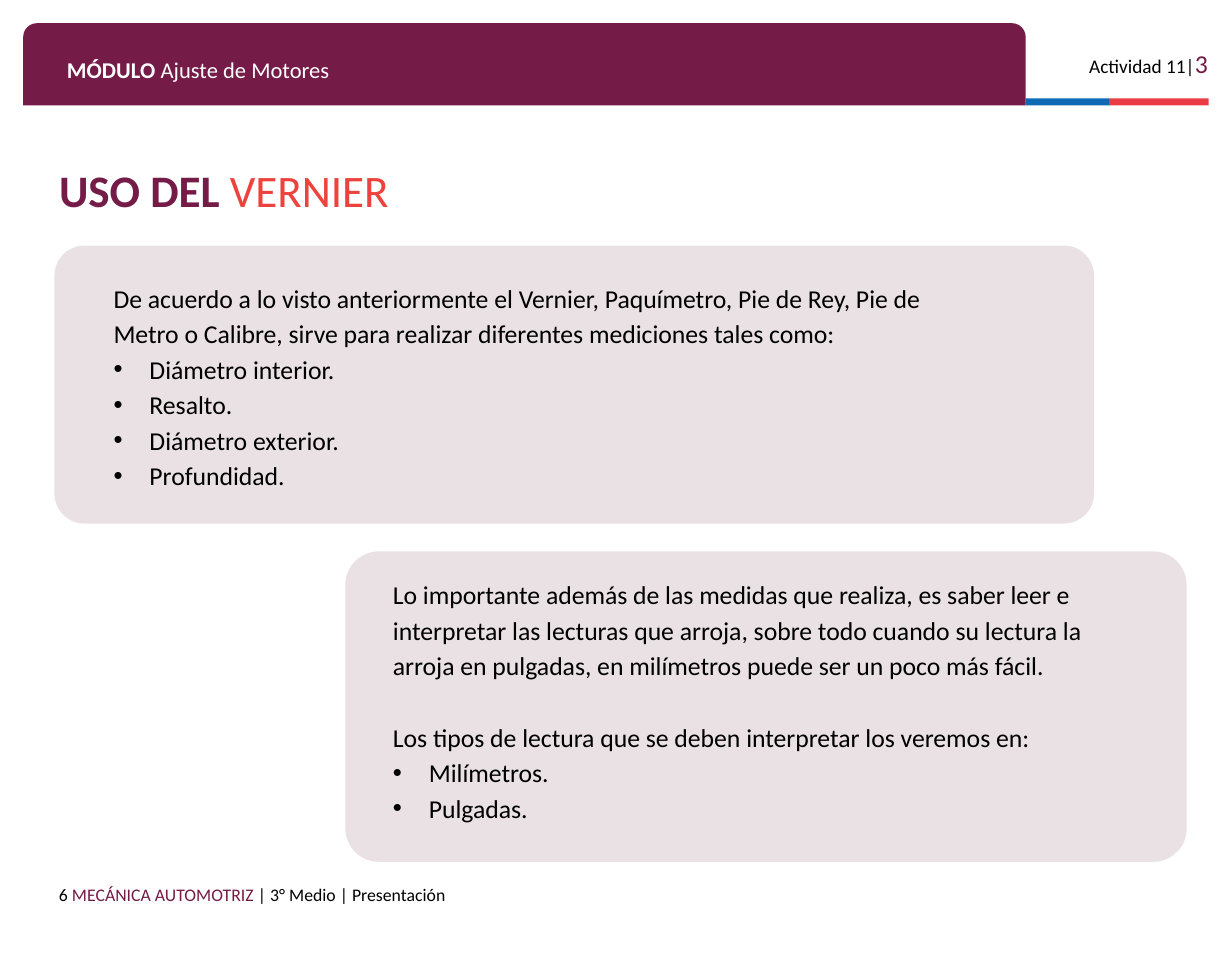
from lxml import etree
from pptx import Presentation, util as u
from pptx.dml.color import RGBColor
from pptx.enum import shapes, text
from pptx.oxml import ns

PLUM = RGBColor(0x74, 0x1B, 0x47)
BLUE = RGBColor(0x0F, 0x69, 0xB4)
RED = RGBColor(0xEB, 0x3C, 0x46)
CORAL = RGBColor(0xED, 0x42, 0x3D)
MIST = RGBColor(0xE9, 0xE1, 0xE4)
BLACK = RGBColor(0, 0, 0)
WHITE = RGBColor(255, 255, 255)
FONT = "Calibri"
WIDE, HIGH = 10.63, 8.27
INDENT = u.Inches(0.31)
BLOCK_GAP = u.Pt(22.4)  # one line of 16 pt text at 1.15 spacing
KIND = shapes.MSO_SHAPE


def place(item, box):
    item.left, item.top, item.width, item.height = map(u.Inches, box)


def add_fill(slide, kind, box, color, *adjust):
    """Add a flat, unlined shape."""
    shape = slide.shapes.add_shape(kind, *map(u.Inches, box))
    shape.shadow.inherit = False
    shape.fill.solid()
    shape.fill.fore_color.rgb = color
    shape.line.fill.background()
    for i, value in enumerate(adjust):
        shape.adjustments[i] = value


def set_line(item, box, runs, align=text.PP_ALIGN.LEFT):
    """Write one line; each run is (words, size, color, bold)."""
    place(item, box)
    frame = item.text_frame
    frame.word_wrap = True
    frame.auto_size = text.MSO_AUTO_SIZE.NONE
    frame.margin_left = frame.margin_right = u.Inches(0.1)
    frame.margin_top = frame.margin_bottom = u.Inches(0.1)
    para = frame.paragraphs[0]
    para.alignment = align
    para.font.name = FONT
    for words, size, color, bold in runs:
        run = para.add_run()
        run.text = words
        run.font.size = u.Pt(size)
        run.font.color.rgb = color
        run.font.bold = bold
    return para


def add_line(slide, box, runs, **more):
    item = slide.shapes.add_textbox(0, 0, 0, 0)
    set_line(item, box, runs, **more)


def add_header(slide, box):
    """Module bar, two-colour strip and activity number."""
    left, top, width, height = box
    bar, blue, strip = 8.65, 0.72, 0.06
    low = top + height - strip
    edge = left + bar
    add_fill(slide, KIND.ROUND_2_SAME_RECTANGLE,
             (left, top, bar, height), PLUM, 0.167, 0)
    add_fill(slide, KIND.RECTANGLE, (edge, low, blue, strip), BLUE)
    add_fill(slide, KIND.RECTANGLE,
             (edge + blue, low, width - bar - blue, strip), RED)
    add_line(slide, (edge + 0.39, top + 0.11, 1.28, 0.38),
             [("Actividad 11|", 12, BLACK, False), ("3", 16, PLUM, False)],
             align=text.PP_ALIGN.RIGHT)
    add_line(slide, (left + 0.28, top + 0.18, 8.14, 0.35),
             [("MÓDULO ", 14, WHITE, True),
              ("Ajuste de Motores", 14, WHITE, False)])


def set_bullet(para, mark):
    """Give the paragraph a hanging bullet, or none."""
    props = para._p.get_or_add_pPr()
    props.set("marL", str(INDENT if mark else 0))
    props.set("indent", str(-INDENT if mark else 0))
    if mark:
        font = etree.SubElement(props, ns.qn("a:buFont"))
        font.set("typeface", "Arial")
        etree.SubElement(props, ns.qn("a:buChar")).set("char", "•")
    else:
        etree.SubElement(props, ns.qn("a:buNone"))


def add_panel(slide, body, box, inset, blocks):
    """Rounded panel with a body; a block is (intro, bullet items)."""
    left, top, width, height = box
    add_fill(slide, KIND.ROUNDED_RECTANGLE, box, MIST, 0.108)
    slide.shapes.element.append(body.element)  # text above its panel
    dx, dy, wide, high = inset
    place(body, (left + dx, top + dy, wide, high))
    frame = body.text_frame
    frame.word_wrap = True
    frame.auto_size = text.MSO_AUTO_SIZE.NONE
    lines = [(words, i > 0, n > 0 and i == 0)
             for n, (intro, items) in enumerate(blocks)
             for i, words in enumerate([intro, *items])]
    frame.text = "\n".join(words for words, _, _ in lines)
    for para, (_, mark, gap) in zip(frame.paragraphs, lines):
        para.line_spacing = 1.15
        para.space_before = BLOCK_GAP if gap else u.Pt(0)
        para.space_after = u.Pt(0)
        set_bullet(para, mark)
        para.font.name = FONT
        para.font.size = u.Pt(16)
        para.font.color.rgb = BLACK


def main():
    deck = Presentation()
    deck.slide_width, deck.slide_height = u.Inches(WIDE), u.Inches(HIGH)
    slide = deck.slides.add_slide(deck.slide_layouts[3])
    title, uses, types = slide.placeholders

    add_header(slide, (0.2, 0.2, WIDE - 0.4, 0.71))

    # Title
    para = set_line(title, (0.41, 1.5, 9.79, 0.35),
                    [("USO DEL ", 28, PLUM, True),
                     ("VERNIER", 28, CORAL, False)])
    para.line_spacing = 0.8
    title.text_frame.vertical_anchor = text.MSO_ANCHOR.MIDDLE

    # Panels
    add_panel(slide, uses, (0.47, 2.12, 8.97, 2.4), (0.41, 0.23, 7.25, 1.95), [
        ("De acuerdo a lo visto anteriormente el Vernier, Paquímetro, "
         "Pie de Rey, Pie de Metro o Calibre, sirve para realizar "
         "diferentes mediciones tales como:",
         ["Diámetro interior.", "Resalto.", "Diámetro exterior.",
          "Profundidad."])])
    add_panel(slide, types, (2.98, 4.76, 7.26, 2.68), (0.31, 0.15, 6.27, 2.26), [
        ("Lo importante además de las medidas que realiza, es saber leer e "
         "interpretar las lecturas que arroja, sobre todo cuando su lectura "
         "la arroja en pulgadas, en milímetros puede ser un poco más fácil.",
         []),
        ("Los tipos de lectura que se deben interpretar los veremos en:",
         ["Milímetros.", "Pulgadas."])])

    # Footer
    add_line(slide, (0.41, 7.53, 7.42, 0.38),
             [("6 ", 11, BLACK, False),
              ("MECÁNICA AUTOMOTRIZ", 11, PLUM, False),
              (" | 3° Medio | Presentación", 11, BLACK, False)])
    deck.save("out.pptx")


if __name__ == "__main__":
    main()
